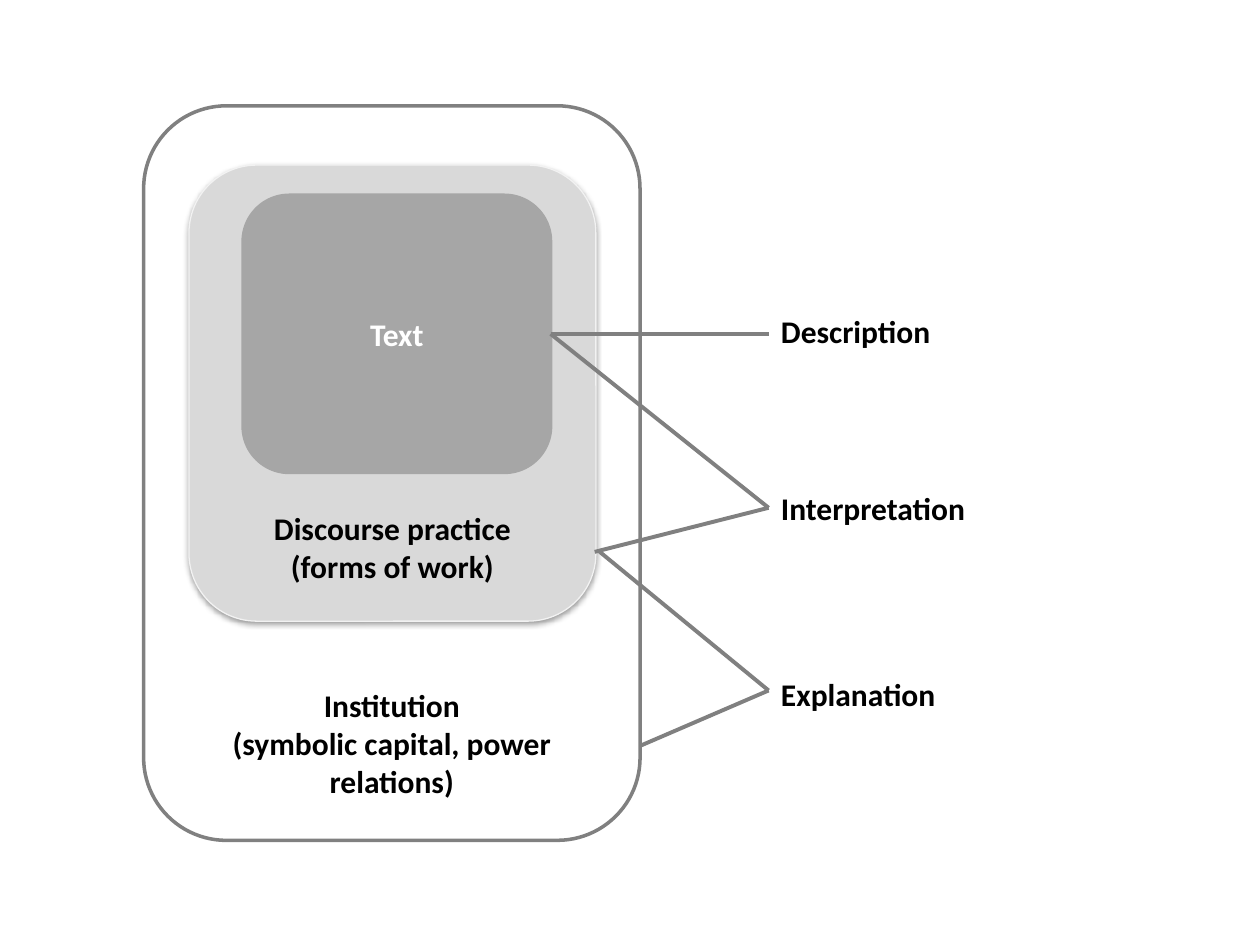
"""Build a slide of nested discourse layers linked to stages of analysis."""
from lxml import etree
from pptx import Presentation
from pptx.dml.color import RGBColor
from pptx.enum.shapes import MSO_CONNECTOR, MSO_SHAPE
from pptx.enum.text import MSO_ANCHOR, MSO_AUTO_SIZE, PP_ALIGN
from pptx.oxml import parse_xml
from pptx.oxml.ns import nsdecls, qn
from pptx.util import Inches, Pt

ROUNDED = MSO_SHAPE.ROUNDED_RECTANGLE
STRAIGHT = MSO_CONNECTOR.STRAIGHT
MIDDLE, BOTTOM = MSO_ANCHOR.MIDDLE, MSO_ANCHOR.BOTTOM
LEFT, CENTER = PP_ALIGN.LEFT, PP_ALIGN.CENTER
FIT_SHAPE = MSO_AUTO_SIZE.SHAPE_TO_FIT_TEXT

BLACK = RGBColor(0x00, 0x00, 0x00)
WHITE = RGBColor(0xFF, 0xFF, 0xFF)
DARK_GRAY = RGBColor(0x80, 0x80, 0x80)
MID_GRAY = RGBColor(0xA6, 0xA6, 0xA6)
LIGHT_GRAY = RGBColor(0xD9, 0xD9, 0xD9)
PALE_GRAY = RGBColor(0xF2, 0xF2, 0xF2)


def write_text(frame, lines, color=BLACK, align=LEFT, size=18, font="Calibri"):
    """Write each line as a bold paragraph in the text frame."""
    for index, line in enumerate(lines):
        paragraph = frame.add_paragraph() if index else frame.paragraphs[0]
        paragraph.alignment = align
        run = paragraph.add_run()
        run.text = line
        run.font.name = font
        run.font.size = Pt(size)
        run.font.bold = True
        run.font.color.rgb = color


class Diagram:
    """Hold the slide and the shared style of its elements."""

    link_color = DARK_GRAY
    link_width = Pt(2.25)
    label_left = 6.1
    label_height = 0.4
    text_inset = Inches(0.13)

    def __init__(self, slide):
        """Keep the slide to draw on."""
        self.slide = slide

    def layer(self, box, lines, fill, outline, width=2, color=BLACK, anchor=BOTTOM):
        """Add a rounded layer with centred text."""
        shape = self.slide.shapes.add_shape(ROUNDED, *map(Inches, box))
        shape.shadow.inherit = False
        shape.fill.solid()
        shape.fill.fore_color.rgb = fill
        shape.line.color.rgb = outline
        shape.line.width = Pt(width)
        frame = shape.text_frame
        frame.word_wrap = True
        frame.vertical_anchor = anchor
        if anchor == BOTTOM:
            frame.margin_bottom = self.text_inset
        write_text(frame, lines, color=color, align=CENTER)
        return shape

    def shadow(self, shape):
        """Give a shape a soft shadow below it."""
        effects = shape._element.spPr.find(qn("a:effectLst"))
        effects.append(parse_xml(
            f'<a:outerShdw {nsdecls("a")} blurRad="{Pt(3.1)}" dist="{Pt(1.6)}" '
            'dir="5400000" rotWithShape="0"><a:srgbClr val="000000">'
            '<a:alpha val="38000"/></a:srgbClr></a:outerShdw>'))

    def label(self, text, top, width):
        """Add the name of a stage of analysis."""
        box = self.slide.shapes.add_textbox(
            Inches(self.label_left), Inches(top), Inches(width), Inches(self.label_height))
        frame = box.text_frame
        frame.word_wrap = False
        frame.auto_size = FIT_SHAPE
        write_text(frame, [text])

    def link(self, x, y, end_y):
        """Add a line from a layer edge to the label column."""
        points = map(Inches, (x, y, self.label_left, end_y))
        connector = self.slide.shapes.add_connector(STRAIGHT, *points)
        connector.line.color.rgb = self.link_color
        connector.line.width = self.link_width
        etree.SubElement(connector._element.spPr, qn("a:effectLst"))


def main():
    """Create and save the presentation."""
    presentation = Presentation()
    presentation.slide_width = Inches(10)
    presentation.slide_height = Inches(7.5)
    diagram = Diagram(presentation.slides.add_slide(presentation.slide_layouts[6]))

    diagram.layer((1.14, 0.84, 3.94, 5.83),
                  ["Institution", "(symbolic capital, power relations)"], WHITE, DARK_GRAY)
    practice = diagram.layer((1.5, 1.31, 3.23, 3.62),
                             ["Discourse practice", "(forms of work)"],
                             LIGHT_GRAY, PALE_GRAY, width=0.75)
    diagram.shadow(practice)
    diagram.layer((1.93, 1.55, 2.44, 2.2), ["Text"], MID_GRAY, MID_GRAY,
                  color=WHITE, anchor=MIDDLE)

    stages = [
        ("Description", 2.43, 1.4, 2.65, [(4.37, 2.65)]),
        ("Interpretation", 3.83, 1.67, 4.03, [(4.37, 2.65), (4.72, 4.38)]),
        ("Explanation", 5.31, 1.44, 5.48, [(4.76, 4.38), (5.08, 5.92)]),
    ]
    for name, top, width, end_y, starts in stages:
        diagram.label(name, top, width)
        for x, y in starts:
            diagram.link(x, y, end_y)

    presentation.save("out.pptx")


if __name__ == "__main__":
    main()
